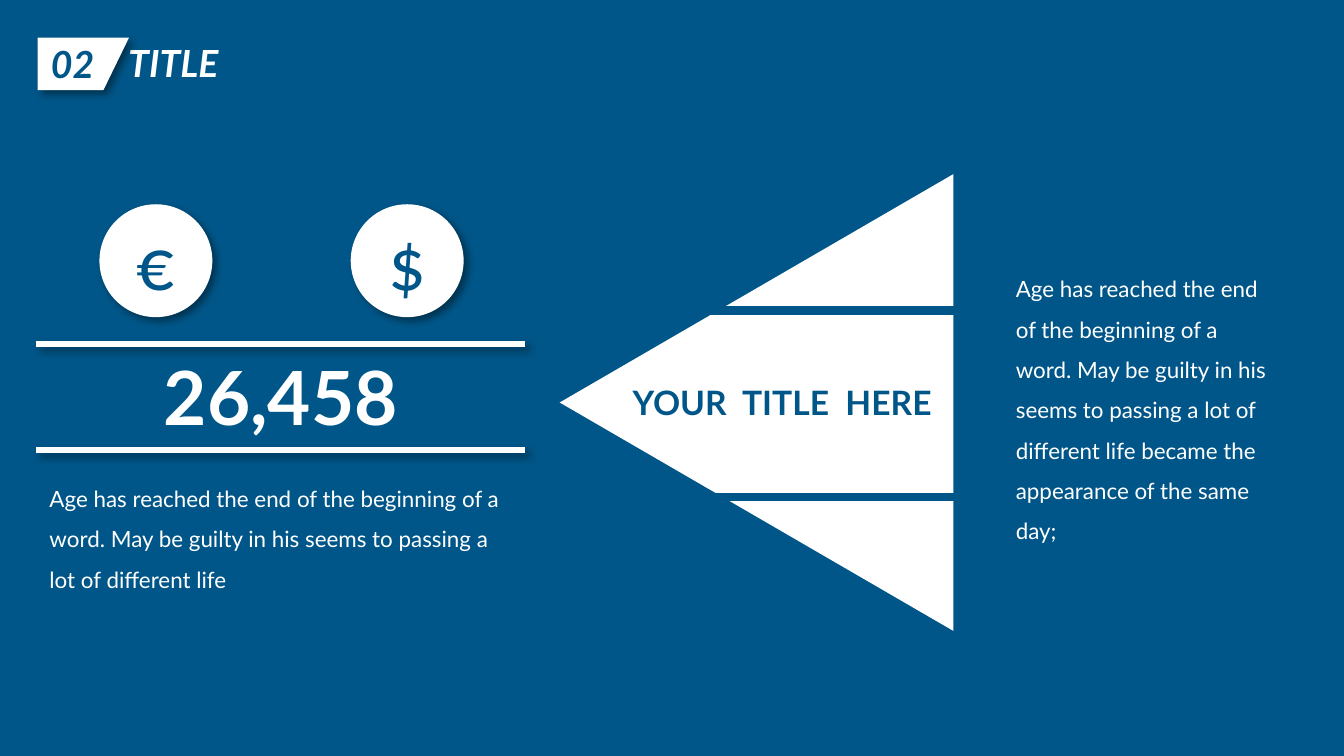
from lxml.etree import SubElement
from pptx import Presentation
from pptx.dml.color import RGBColor
from pptx.enum.shapes import MSO_CONNECTOR as Link, MSO_SHAPE as Kind
from pptx.enum.text import MSO_ANCHOR as Anchor, MSO_AUTO_SIZE as Fit, PP_ALIGN as Align
from pptx.oxml.ns import qn
from pptx.util import Inches, Pt

BLUE = RGBColor(0x00, 0x56, 0x88)
WHITE = RGBColor(0xFF, 0xFF, 0xFF)

# Left column, in grid units
LEFT, WIDE = 2.7, 36.4
STORY = ("Age has reached the end of the beginning of a word. "
         "May be guilty in his seems to passing a lot of different life")


def grid(*units):
    """Turn grid units, each a hundredth of the slide's width, into lengths."""
    return [Inches(n / 10) for n in units]


def shade(shape):
    """Give a shape a soft shadow to the lower right."""
    props = shape._element.spPr
    effects = props.find(qn("a:effectLst"))
    cast = SubElement(effects, qn("a:outerShdw"), blurRad=str(Pt(4)),
                      dist=str(Pt(3)), dir=str(45 * 60000),
                      algn="tl", rotWithShape="0")
    color = SubElement(cast, qn("a:srgbClr"), val="000000")
    SubElement(color, qn("a:alpha"), val="40000")


def write(shape, text, size=12, color=WHITE, font="Lato", bold=False,
          italic=False, align=Align.LEFT, anchor=Anchor.TOP, space=1.0):
    frame = shape.text_frame
    frame.word_wrap = True
    frame.auto_size = Fit.NONE
    frame.vertical_anchor = anchor
    para = frame.paragraphs[0]
    para.alignment, para.line_spacing = align, space
    run = para.add_run()
    run.text = text
    face = run.font
    face.name, face.size = font, Pt(size)
    face.bold, face.italic = bold, italic
    face.color.rgb = color


def label(slide, box, text, **style):
    write(slide.shapes.add_textbox(*grid(*box)), text, **style)


def paint(shape):
    """Fill a shape plain white, with no outline."""
    shape.shadow.inherit = False
    shape.fill.solid()
    shape.fill.fore_color.rgb = WHITE
    shape.line.fill.background()
    return shape


def form(slide, kind, box):
    return paint(slide.shapes.add_shape(kind, *grid(*box)))


def rule(slide, start, end, y, color, width):
    line = slide.shapes.add_connector(Link.STRAIGHT, *grid(start, y, end, y))
    line.line.color.rgb = color
    line.line.width = Pt(width)
    SubElement(line._element.spPr, qn("a:effectLst"))
    return line


def header(slide):
    # Slanted number tag
    points = [(9.6, 2.8), (7.7, 6.7), (2.8, 6.7)]
    pen = slide.shapes.build_freeform(*grid(2.8, 2.8))
    pen.add_line_segments([grid(*point) for point in points], close=True)
    tag = paint(pen.convert_to_shape())
    shade(tag)
    write(tag, "02", size=20, color=BLUE, bold=True, italic=True,
          anchor=Anchor.MIDDLE)
    # Slide title
    title = slide.shapes.title
    title.left, title.top, title.width, title.height = grid(8.2, 2.5, 9.4, 4.4)
    write(title, "TITLE", size=20, bold=True, italic=True, align=Align.CENTER)


def figure(slide):
    # Currency coins
    for x, sign in ((7.4, "€"), (26.1, "$")):
        coin = form(slide, Kind.OVAL, (x, 15.2, 8.4, 8.4))
        shade(coin)
        write(coin, sign, size=40, color=BLUE, font="Calibri",
              align=Align.CENTER, anchor=Anchor.MIDDLE)
    # Number between two rules
    for y in (25.6, 33.5):
        shade(rule(slide, LEFT, LEFT + WIDE, y, WHITE, 3))
    label(slide, (LEFT, 25.6, WIDE, 7.7), "26,458", size=40, bold=True,
          align=Align.CENTER)
    label(slide, (LEFT, 34.6, WIDE, 10.1), STORY, space=1.5)


def arrow(slide):
    # Triangle pointing left, cut in three by rules
    wedge = form(slide, Kind.ISOSCELES_TRIANGLE, (39.3, 15.3, 34, 29.3))
    wedge.rotation = 270
    for start, end, y in ((52.8, 71, 23.1), (51.8, 71.5, 37)):
        rule(slide, start, end, y, BLUE, 4.5)
    label(slide, (45.9, 27.9, 24.6, 4), "YOUR  TITLE  HERE", size=18,
          color=BLUE, bold=True, align=Align.CENTER)


def main():
    deck = Presentation()
    deck.slide_width, deck.slide_height = grid(100, 56.25)
    slide = deck.slides.add_slide(deck.slide_layouts[5])
    back = slide.background.fill
    back.solid()
    back.fore_color.rgb = BLUE

    header(slide)
    figure(slide)
    arrow(slide)
    # Text on the right
    label(slide, (74.6, 19, 21.2, 22.2),
          STORY + " became the appearance of the same day;", space=1.5)
    deck.save("out.pptx")


if __name__ == "__main__":
    main()
